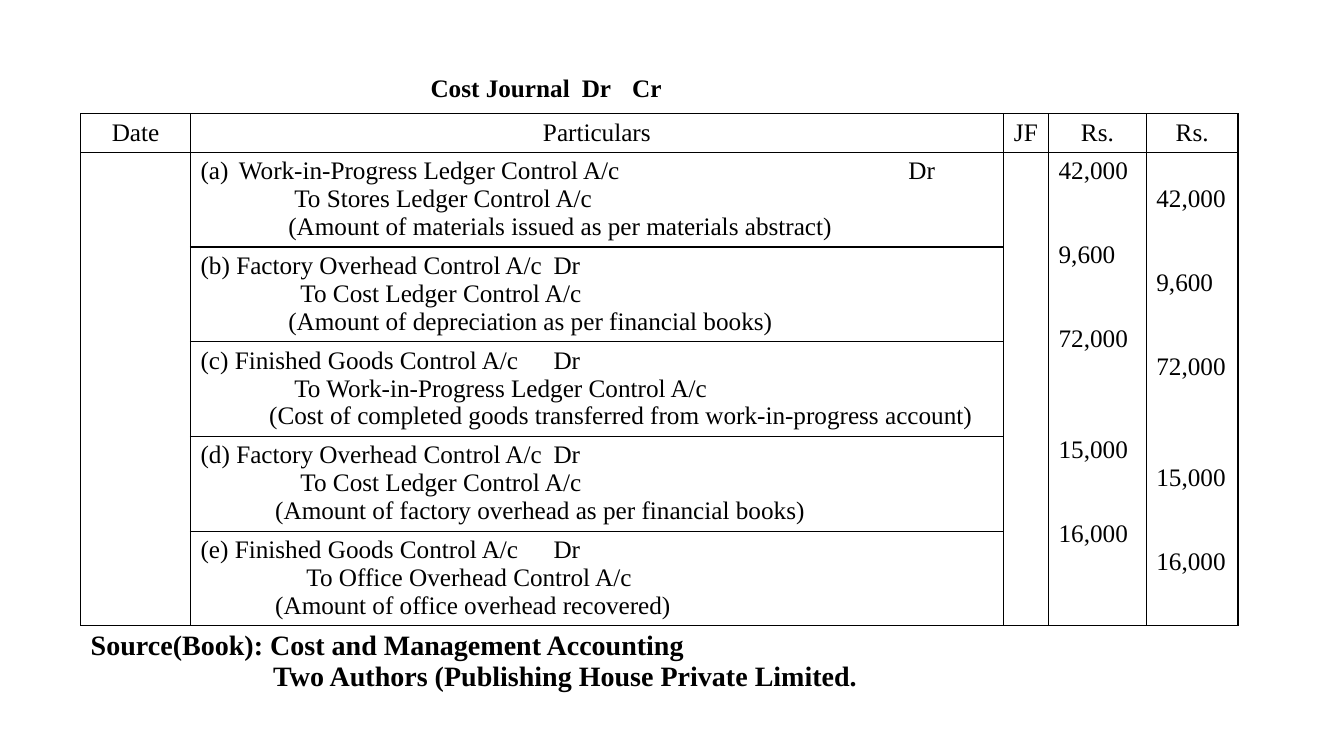
import pptx
import pptx.util
import pptx.dml.color
import pptx.enum.text
import pptx.oxml
import pptx.oxml.ns
from dataclasses import dataclass
from lxml import etree

Inches, Pt = pptx.util.Inches, pptx.util.Pt
ALIGN, ANCHOR = pptx.enum.text.PP_ALIGN, pptx.enum.text.MSO_ANCHOR
qn = pptx.oxml.ns.qn


@dataclass
class Theme:
    font: str = "Times New Roman"
    ink: str = "000000"
    body: int = 18
    source: int = 20
    line: float = 1
    leading: float = 19.93  # height of one body line in points


# Particulars: account, place of Dr, credited account, its indent, narration, its indent
ENTRIES = [
    ("Work-in-Progress Ledger Control A/c", 7.02, "To Stores Ledger Control A/c", 0.93,
     "(Amount of materials issued as per materials abstract)", 0.87),
    ("(b) Factory Overhead Control A/c", 7.0, "To Cost Ledger Control A/c", 0.99,
     "(Amount of depreciation as per financial books)", 0.87),
    ("(c) Finished Goods Control A/c", 7.08, "To Work-in-Progress Ledger Control A/c", 0.93,
     "(Cost of completed goods transferred from work-in-progress account)", 0.68),
    ("(d) Factory Overhead Control A/c", 7.0, "To Cost Ledger Control A/c", 0.99,
     "(Amount of factory overhead as per financial books)", 0.74),
    ("(e) Finished Goods Control A/c", 7.08, "To Office Overhead Control A/c", 1.05,
     "(Amount of office overhead recovered)", 0.74),
]
# Amounts with the number of lines left free above each
AMOUNTS = [("42,000", 0), ("9,600", 2), ("72,000", 2), ("15,000", 3), ("16,000", 2)]
HEADINGS = ["Date", "Particulars", "JF", "Rs.", "Rs."]
SOURCE = [("Source(Book): Cost and Management Accounting", 0),
          ("Two Authors (Publishing House Private Limited.", 1.81)]
COLUMNS = [1.09, 8.06, 0.45, 0.97, 0.91]
ROWS = [0.38] + [0.94] * len(ENTRIES) + [0.69]


class Deck:
    def __init__(self, theme):
        self.theme = theme
        self.prs = pptx.Presentation()
        self.prs.slide_width, self.prs.slide_height = Inches(13.33), Inches(7.5)
        self.s = self.prs.slides.add_slide(self.prs.slide_layouts[5])

    def paragraph(self, tf, text, first=False, size=None, bold=False, align=ALIGN.LEFT,
                  indent=0, hang=0, tabs=(), numbering=None, before=0):
        p = tf.paragraphs[0] if first else tf.add_paragraph()
        p.text = text
        p.alignment = align
        p.space_before = Pt(before)
        for r in p.runs:
            r.font.name, r.font.size, r.font.bold = self.theme.font, Pt(size or self.theme.body), bold
            r.font.color.rgb = pptx.dml.color.RGBColor.from_string(self.theme.ink)
        pPr = p._p.get_or_add_pPr()
        pPr.set("marL", str(Inches(indent)))
        pPr.set("indent", str(-Inches(hang)))
        if numbering:
            etree.SubElement(pPr, qn("a:buFont"), typeface="+mj-lt")
            etree.SubElement(pPr, qn("a:buAutoNum"), type=numbering)
        if tabs:
            stops = etree.SubElement(pPr, qn("a:tabLst"))
            for pos in tabs:
                etree.SubElement(stops, qn("a:tab"), pos=str(Inches(pos)), algn="l")

    def title(self, text, at, tabs):
        sp = self.s.shapes.title
        sp.left, sp.top, sp.width, sp.height = map(Inches, at)
        tf = sp.text_frame
        tf.word_wrap = True
        tf.vertical_anchor = ANCHOR.TOP
        tf.auto_size = pptx.enum.text.MSO_AUTO_SIZE.NONE
        self.paragraph(tf, text, first=True, bold=True, tabs=tabs)

    def table(self, left, top):
        height = sum(ROWS)
        table = self.s.shapes.add_table(len(ROWS), len(COLUMNS), Inches(left), Inches(top),
                                        Inches(sum(COLUMNS)), Inches(height)).table
        table.first_row = table.horz_banding = False
        for column, width in zip(table.columns, COLUMNS):
            column.width = Inches(width)
        for row, row_height in zip(table.rows, ROWS):
            row.height = Inches(row_height)
        return table

    def border(self, cell, sides):
        tcPr = cell._tc.get_or_add_tcPr()
        for side in "LRTB":
            ln = etree.SubElement(tcPr, qn("a:ln" + side), w=str(Pt(self.theme.line)))
            if side in sides:
                fill = etree.SubElement(ln, qn("a:solidFill"))
                etree.SubElement(fill, qn("a:srgbClr"), val=self.theme.ink)
            else:
                etree.SubElement(ln, qn("a:noFill"))
        cell.fill.background()

    def amounts(self, cell, skip=0):
        lead = self.theme.leading
        cell.margin_top = Inches(0.05) + Pt(skip * lead)
        for i, (amount, gap) in enumerate(AMOUNTS):
            self.paragraph(cell.text_frame, amount, first=i == 0, before=round(gap * lead, 1))


def main():
    deck = Deck(Theme())

    # Heading line
    deck.title("Cost Journal\tDr\tCr", (4.17, 0.67, 8.1, 0.4), (6.37, 7.35))

    # Journal grid
    table = deck.table(0.8, 1.13)
    last = len(ROWS) - 1
    for r in range(len(ROWS)):
        for c in range(len(COLUMNS)):
            deck.border(table.cell(r, c), "T" if r == last else "LRTB")
    for c in (0, 2, 3, 4):
        table.cell(1, c).merge(table.cell(last - 1, c))
    table.cell(last, 0).merge(table.cell(last, len(COLUMNS) - 1))

    # Column headings
    for c, heading in enumerate(HEADINGS):
        cell = table.cell(0, c)
        cell.vertical_anchor = ANCHOR.MIDDLE
        deck.paragraph(cell.text_frame, heading, first=True, align=ALIGN.CENTER)

    # Entries
    for r, (debit, dr, credit, credit_in, note, note_in) in enumerate(ENTRIES, 1):
        tf = table.cell(r, 1).text_frame
        hang, numbering = (0.38, "alphaLcParenBoth") if r == 1 else (0, None)
        deck.paragraph(tf, debit + "\tDr", first=True, indent=hang, hang=hang,
                       numbering=numbering, tabs=[dr])
        deck.paragraph(tf, credit, indent=credit_in)
        deck.paragraph(tf, note, indent=note_in)

    # Debit and credit amounts
    deck.amounts(table.cell(1, 3))
    deck.amounts(table.cell(1, 4), skip=1)

    # Source
    for i, (text, indent) in enumerate(SOURCE):
        deck.paragraph(table.cell(last, 0).text_frame, text, first=i == 0,
                       size=deck.theme.source, bold=True, indent=indent)

    deck.prs.save("out.pptx")


if __name__ == "__main__":
    main()
